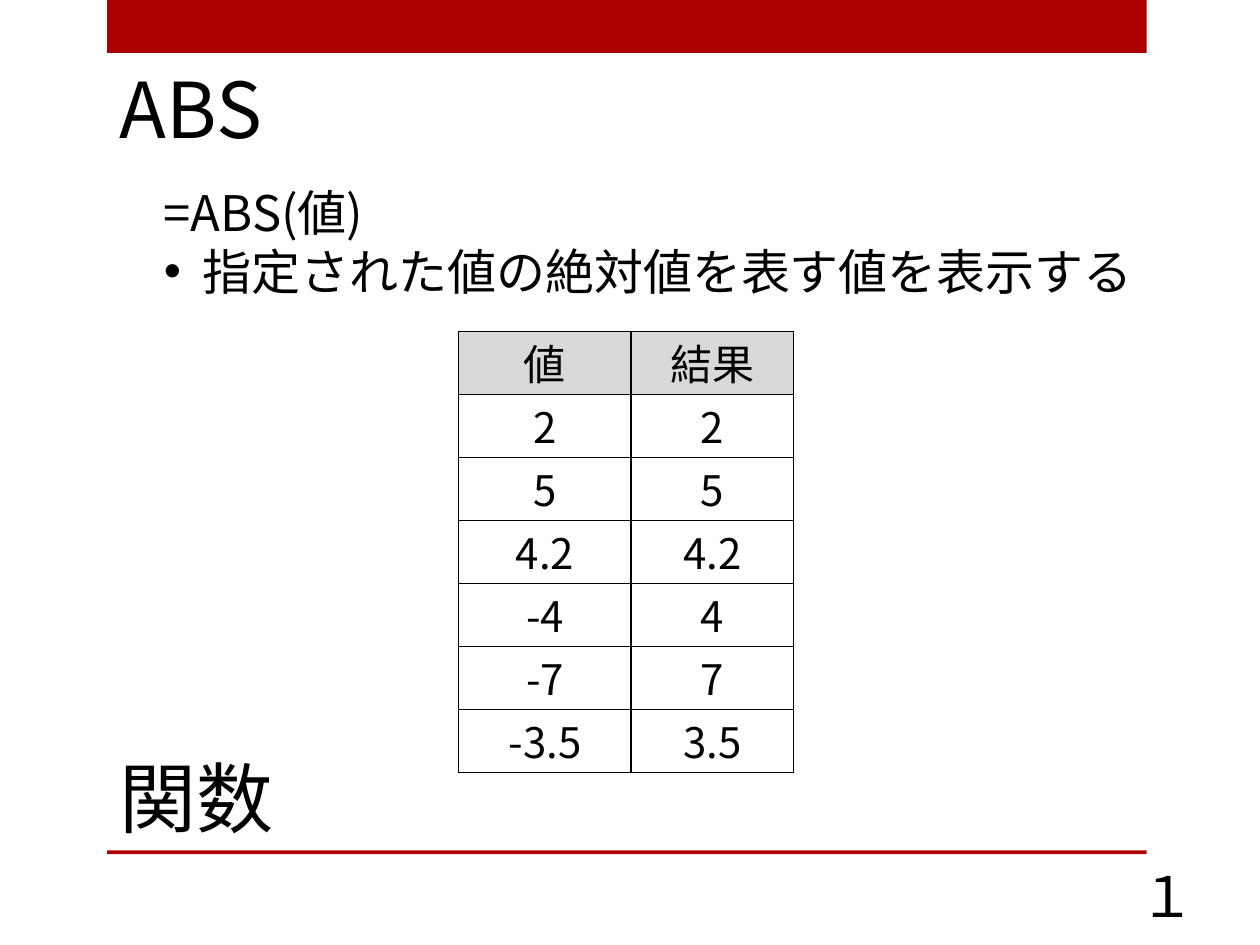
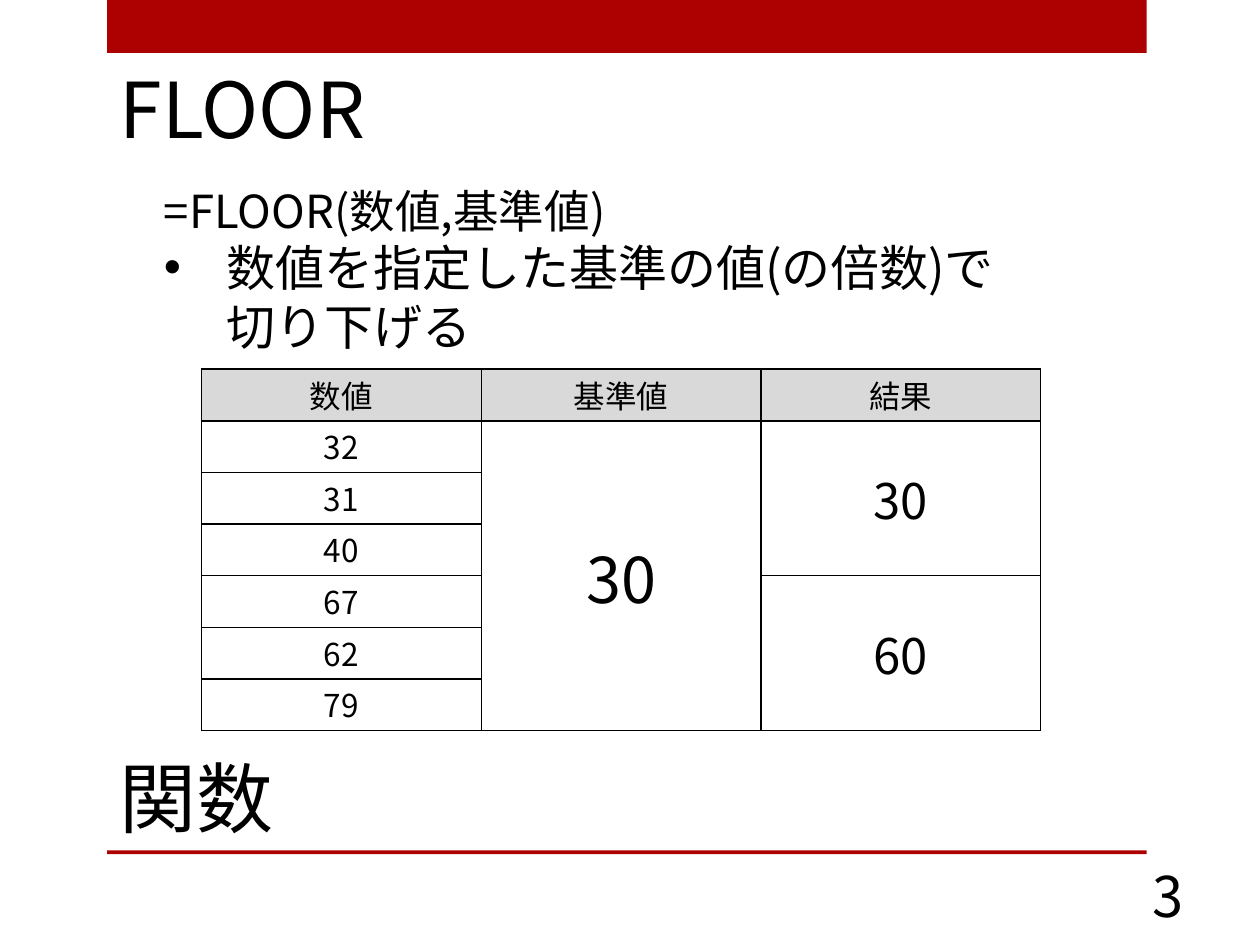
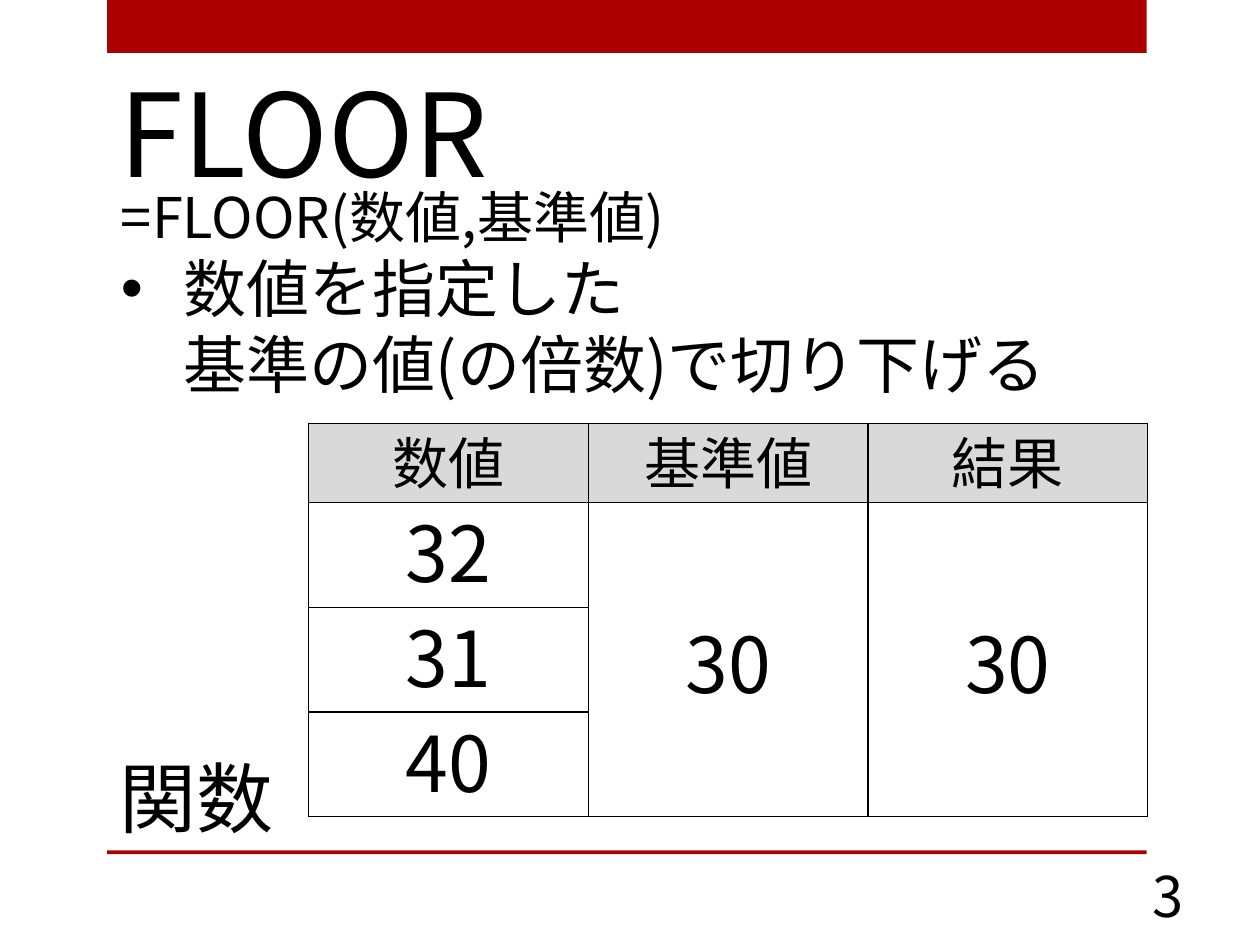
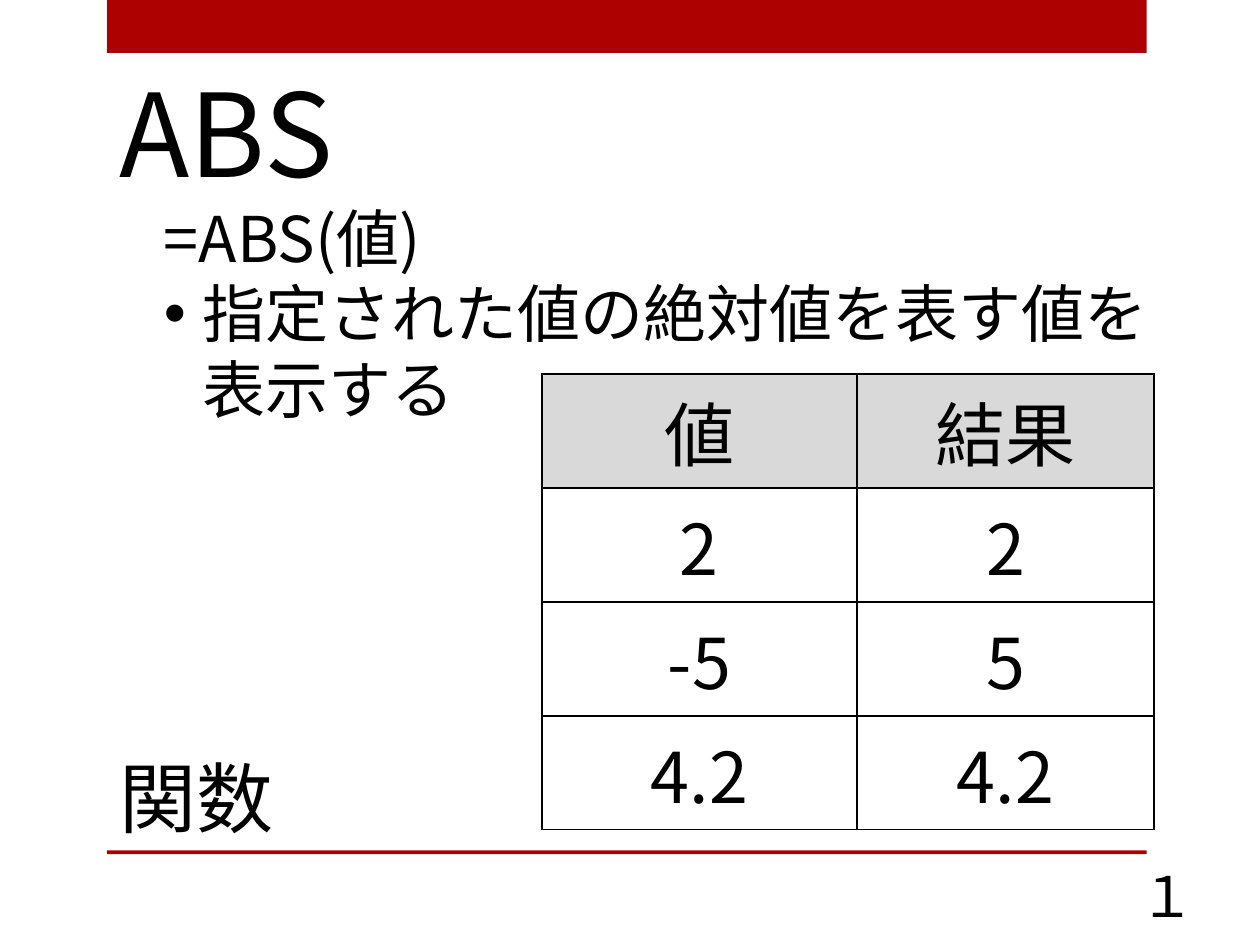
from dataclasses import dataclass

from lxml import etree
from pptx import Presentation
from pptx import util as u
from pptx.dml import color
from pptx.enum import shapes, text
from pptx.oxml import ns


@dataclass(frozen=True)
class Theme:
    font: str = "Noto Sans CJK JP"
    ink: str = "000000"
    band: str = "AD0101"
    header: str = "D9D9D9"
    section_size: int = 44
    number_size: int = 32
    border: float = 1
    tight_line: float = 1.2
    tight_margin: float = 0.08


THEME = Theme()
SECTION = "関数"
SECTION_AT = (0.85, 5.91, 1.47, 0.84)
NUMBER_AT = (8.54, 6.79, 1.46, 0.64)
BANDS = [(0.85, 0, 8.25, 0.42), (0.85, 6.75, 8.25, 0.03)]

ABS_TEXT = ["=ABS(値)", "指定された値の絶対値を表す値を表示する"]
FLOOR_FORMULA = "=FLOOR(数値,基準値)"
ABS_HEAD = ["値", "結果"]
FLOOR_HEAD = ["数値", "基準値", "結果"]

SLIDES = [
    {
        "title": "ABS", "title_size": 44, "title_at": (0.85, 0.44, 1.47, 0.84),
        "body": ABS_TEXT, "body_sizes": (28, 28), "indent": 0.31,
        "body_at": (1.2, 1.4, 8.14, 1.51), "number": "１",
        "table": {
            "at": (3.64, 2.63), "columns": [1.37, 1.29], "heights": (0.5, 0.5),
            "head_size": 24, "sizes": [24, 24], "anchor": text.MSO_ANCHOR.MIDDLE,
            "tight": True,
            "rows": [ABS_HEAD, ["2", "2"], ["5", "5"], ["4.2", "4.2"],
                     ["-4", "4"], ["-7", "7"], ["-3.5", "3.5"]],
        },
    },
    {
        "title": "FLOOR", "title_size": 44, "title_at": (0.85, 0.44, 4.09, 0.84),
        "body": [FLOOR_FORMULA, "数値を指定した基準の値(の倍数)で\n切り下げる"],
        "body_sizes": (26, 28), "indent": 0.5,
        "body_at": (1.2, 1.4, 8.14, 2.42), "number": "3",
        "table": {
            "at": (1.6, 2.93), "columns": [2.22] * 3, "heights": (0.41, 0.41),
            "head_size": 18, "sizes": [18, 36, 28], "anchor": text.MSO_ANCHOR.TOP,
            "tight": True,
            "rows": [FLOOR_HEAD, ["32", "30", "30"], ["31", None, None],
                     ["40", None, None], ["67", None, "60"],
                     ["62", None, None], ["79", None, None]],
        },
    },
    {
        "title": "FLOOR", "title_size": 66, "title_at": (0.85, 0.44, 4.09, 1.21),
        "body": [FLOOR_FORMULA, "数値を指定した\n基準の値(の倍数)で切り下げる"],
        "body_sizes": (32, 36), "indent": 0.5,
        "body_at": (0.86, 1.4, 8.14, 3.06), "number": "3",
        "table": {
            "at": (2.45, 3.36), "columns": [2.22] * 3, "heights": (0.63, 0.83),
            "head_size": 32, "sizes": [44] * 3, "anchor": text.MSO_ANCHOR.TOP,
            "tight": True,
            "rows": [FLOOR_HEAD, ["32", "30", "30"], ["31", None, None],
                     ["40", None, None]],
        },
    },
    {
        "title": "ABS", "title_size": 66, "title_at": (0.85, 0.44, 2.66, 1.21),
        "body": ABS_TEXT, "body_sizes": (36, 36), "indent": 0.31,
        "body_at": (1.2, 1.53, 8.14, 2.52), "number": "１",
        "table": {
            "at": (4.3, 2.97), "columns": [2.5, 2.36], "heights": (0.9, 0.9),
            "head_size": 40, "sizes": [40, 40], "anchor": text.MSO_ANCHOR.MIDDLE,
            "tight": False,
            "rows": [ABS_HEAD, ["2", "2"], ["-5", "5"], ["4.2", "4.2"]],
        },
    },
]


def rgb(value):
    return color.RGBColor.from_string(value)


def inches(values):
    return [u.Inches(value) for value in values]


def write(para, words, size, align=text.PP_ALIGN.LEFT):
    para.alignment = align
    para.space_before = u.Pt(0)
    for index, line in enumerate(words.split("\n")):
        if index:
            para.add_line_break()
        span = para.add_run()
        span.text = line
        span.font.size = u.Pt(size)
        span.font.color.rgb = rgb(THEME.ink)
        span.font.name = THEME.font
        properties = span.font._element
        etree.SubElement(properties, ns.qn("a:ea"), typeface=THEME.font)


def place(box, at):
    box.left, box.top, box.width, box.height = inches(at)
    frame = box.text_frame
    frame.word_wrap = True
    frame.auto_size = text.MSO_AUTO_SIZE.NONE
    frame.vertical_anchor = text.MSO_ANCHOR.TOP
    return frame


def add_label(page, words, at, size, align):
    frame = place(page.shapes.add_textbox(*inches(at)), at)
    write(frame.paragraphs[0], words, size, align)


def add_body(box, content):
    frame = place(box, content["body_at"])
    formula, bullet = frame.paragraphs[0], frame.add_paragraph()
    settings = [(formula, 0, "a:buNone", {}),
                (bullet, content["indent"], "a:buChar", {"char": "•"})]
    for (para, indent, tag, marks), words, size in zip(
            settings, content["body"], content["body_sizes"]):
        write(para, words, size)
        properties = para._p.get_or_add_pPr()
        properties.set("marL", str(u.Inches(indent)))
        properties.set("indent", str(-u.Inches(indent)))
        etree.SubElement(properties, ns.qn(tag), marks)


def add_borders(cell):
    properties = cell._tc.get_or_add_tcPr()
    for side in ("a:lnL", "a:lnR", "a:lnT", "a:lnB"):
        line = etree.SubElement(properties, ns.qn(side), w=str(u.Pt(THEME.border)))
        fill = etree.SubElement(line, ns.qn("a:solidFill"))
        etree.SubElement(fill, ns.qn("a:srgbClr"), val=THEME.ink)


def tighten(cell, size):
    cell.margin_top = u.Inches(THEME.tight_margin)
    cell.margin_bottom = 0
    cell.text_frame.paragraphs[0].line_spacing = u.Pt(size * THEME.tight_line)


def add_grid(page, grid):
    rows, columns = grid["rows"], grid["columns"]
    head_height, row_height = grid["heights"]
    heights = [head_height] + [row_height] * (len(rows) - 1)
    size = (*grid["at"], sum(columns), sum(heights))
    table = page.shapes.add_table(len(rows), len(columns), *inches(size)).table
    table.first_row = table.horz_banding = False
    for column, width in zip(table.columns, columns):
        column.width = u.Inches(width)
    for row, height in zip(table.rows, heights):
        row.height = u.Inches(height)

    for r, values in enumerate(rows):
        for c, value in enumerate(values):
            cell = table.cell(r, c)
            add_borders(cell)
            if r == 0:
                cell.fill.solid()
                cell.fill.fore_color.rgb = rgb(THEME.header)
            else:
                cell.fill.background()
            if value is None:
                continue
            points = grid["sizes"][c] if r else grid["head_size"]
            write(cell.text_frame.paragraphs[0], value, points, text.PP_ALIGN.CENTER)
            last = r
            while last + 1 < len(rows) and rows[last + 1][c] is None:
                last += 1
            cell.vertical_anchor = grid["anchor"]
            if last > r:
                cell.merge(table.cell(last, c))
                cell.vertical_anchor = text.MSO_ANCHOR.MIDDLE
            elif grid["tight"]:
                tighten(cell, points)


def add_layout_bands(page):
    for at in BANDS:
        band = page.shapes.add_shape(shapes.MSO_SHAPE.RECTANGLE, *inches(at))
        band.shadow.inherit = False
        band.fill.solid()
        band.fill.fore_color.rgb = rgb(THEME.band)
        band.line.fill.background()
        page.slide_layout.shapes.element.insert(2, band.element)


def main():
    deck = Presentation()
    deck.slide_width, deck.slide_height = inches((10, 7.5))
    layout = deck.slide_layouts[1]
    for index, content in enumerate(SLIDES):
        page = deck.slides.add_slide(layout)
        if index == 0:
            add_layout_bands(page)
        title = place(page.shapes.title, content["title_at"])
        write(title.paragraphs[0], content["title"], content["title_size"])
        add_label(page, SECTION, SECTION_AT, THEME.section_size, text.PP_ALIGN.LEFT)
        add_body(page.placeholders[1], content)
        add_grid(page, content["table"])
        add_label(page, content["number"], NUMBER_AT, THEME.number_size,
                  text.PP_ALIGN.CENTER)
    deck.save("out.pptx")


if __name__ == "__main__":
    main()
